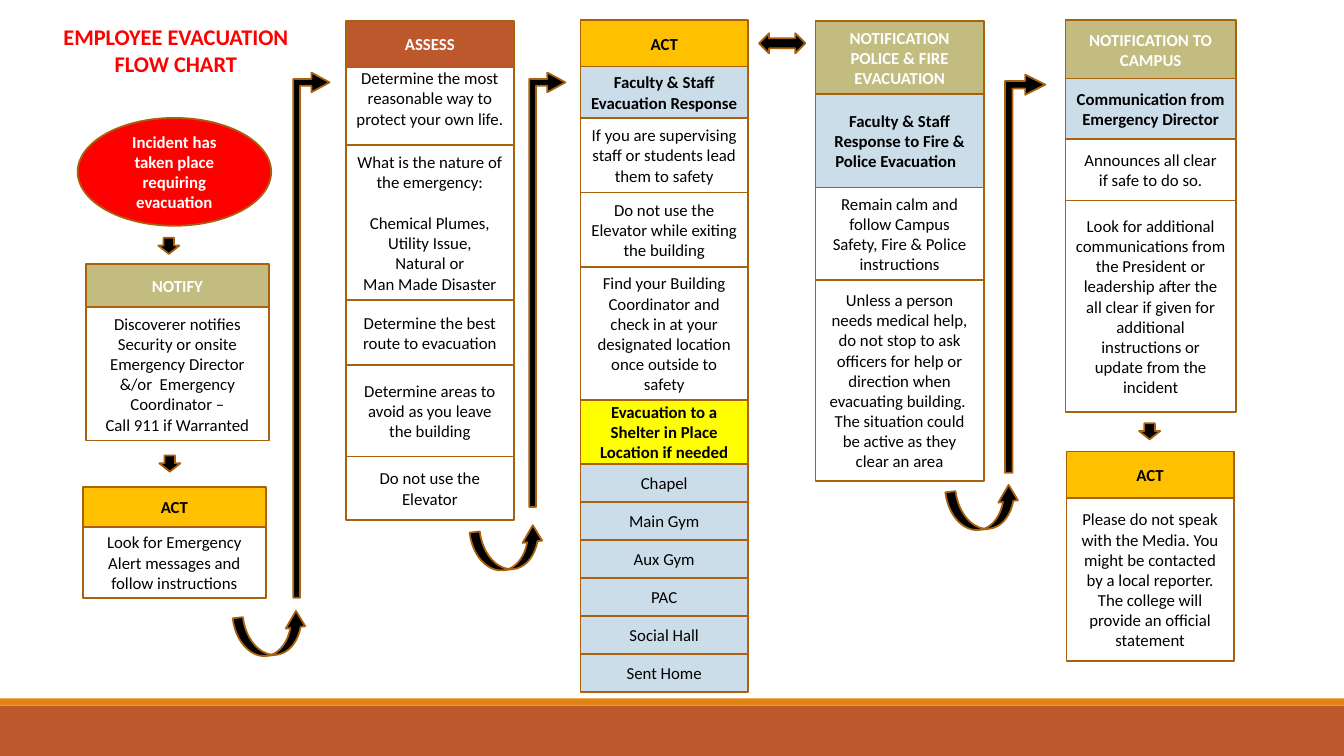
from pptx import Presentation
from pptx.dml.color import RGBColor
from pptx.enum.shapes import MSO_SHAPE
from pptx.enum.text import MSO_ANCHOR, PP_ALIGN
from pptx.util import Inches, Pt

COLS, ROWS = 133.33, 75
CELL = Inches(0.1)
RIM = "A9610D"
LOOKS = {
    "rust": ("BD582C", "FFFFFF", True),
    "olive": ("C2BC80", "FFFFFF", True),
    "gold": ("FFC000", "000000", True),
    "sky": ("CCDDEA", "000000", True),
    "room": ("CCDDEA", "000000", False),
    "sun": ("FFFF00", "000000", True),
    "plain": ("FFFFFF", "000000", False),
    "alarm": ("FF0000", "FFFFFF", True),
    "title": ("FFFFFF", "FF0000", True),
}
ROOMS = ("Chapel", "Main Gym", "Aux Gym", "PAC", "Social Hall", "Sent Home")
STACKS = [
    (8.5, 26.2, 18.2, [
        ("olive", 4.3, "NOTIFY"),
        ("plain", 13.2, "Discoverer notifies Security or onsite Emergency Director "
                        "&/or  Emergency Coordinator –\nCall 911 if Warranted"),
    ]),
    (8.2, 48.3, 18.2, [
        ("gold", 4, "ACT"),
        ("plain", 7, "Look for Emergency Alert messages and follow instructions"),
    ]),
    (34.3, 2.1, 16.7, [
        ("rust", 4.6, "ASSESS"),
        ("plain", 7.7, "Determine the most reasonable way to protect your own life."),
        ("plain", 15.4, "What is the nature of the emergency:\n\nChemical Plumes, "
                        "Utility Issue,\nNatural or\nMan Made Disaster"),
        ("plain", 6.4, "Determine the best route to evacuation"),
        ("plain", 9.1, "Determine areas to avoid as you leave the building"),
        ("plain", 6.3, "Do not use the Elevator"),
    ]),
    (57.6, 2, 16.6, [
        ("gold", 4.6, "ACT"),
        ("sky", 5.1, "Faculty & Staff\nEvacuation Response"),
        ("plain", 7.4, "If you are supervising staff or students lead them to safety"),
        ("plain", 7.4, "Do not use the Elevator while exiting the building"),
        ("plain", 13.2, "Find your Building Coordinator and check in at your "
                        "designated location once outside to safety"),
        ("sun", 6.3, "Evacuation to a Shelter in Place Location if needed"),
        *[("room", 3.78, room) for room in ROOMS],
    ]),
    (80.9, 2.1, 16.7, [
        ("olive", 7.2, "NOTIFICATION POLICE & FIRE EVACUATION"),
        ("sky", 9.3, "Faculty & Staff Response to Fire &\nPolice Evacuation  "),
        ("plain", 9.2, "Remain calm and follow Campus Safety, Fire & Police instructions"),
        ("plain", 19.9, "Unless a person needs medical help, do not stop to ask "
                        "officers for help or direction when evacuating building.  "
                        "The situation could be active as they clear an area"),
    ]),
    (105.7, 2, 16.9, [
        ("olive", 5.8, "NOTIFICATION TO CAMPUS"),
        ("sky", 6, "Communication from Emergency Director"),
        ("plain", 6.1, "Announces all clear\nif safe to do so."),
        ("plain", 21, "Look for additional communications from the President or "
                      "leadership after the all clear if given for additional "
                      "instructions or update from the incident"),
    ]),
    (105.8, 44.8, 16.6, [
        ("gold", 4.6, "ACT"),
        ("plain", 16.2, "Please do not speak with the Media. You might be contacted "
                        "by a local reporter. The college will provide an official "
                        "statement"),
    ]),
]
DOWNS = [(15.7, 23.6), (15.8, 45.2), (113, 42)]
BENDS = [(29.1, 7.2, 3.6, 52.1, 0.271), (52.5, 7.2, 3.6, 43.1, 0.271),
         (99.7, 7.4, 4, 39.5, 0.25)]
CURVES = [(23.3, 60.9), (46.8, 52.4), (94, 48.4)]


def tint(code):
    return RGBColor.from_string(code)


def fit(item, values):
    for key, value in values.items():
        setattr(item, key, value)


def draw(slide, kind, place, fill, rim=RIM, bends=()):
    shape = slide.shapes.add_shape(kind, *[round(n * CELL) for n in place])
    shape.shadow.inherit = False
    shape.fill.solid()
    shape.fill.fore_color.rgb = tint(fill)
    if rim:
        shape.line.color.rgb = tint(rim)
        shape.line.width = Pt(1.25)
    else:
        shape.line.fill.background()
    for spot, value in enumerate(bends):
        shape.adjustments[spot] = value
    return shape


def write(shape, text, ink, bold, size=12, anchor=MSO_ANCHOR.MIDDLE):
    frame = shape.text_frame
    fit(frame, {"word_wrap": True, "vertical_anchor": anchor})
    gap = False
    for spot, line in enumerate(text.split("\n")):
        if not line:
            gap = True
            continue
        para = frame.add_paragraph() if spot else frame.paragraphs[0]
        para.alignment = PP_ALIGN.CENTER
        if gap:
            para.space_before = Pt(14.65)
            gap = False
        run = para.add_run()
        run.text = line
        fit(run.font, {"name": "Calibri", "size": Pt(size), "bold": bold})
        run.font.color.rgb = tint(ink)


def card(slide, place, look, text, kind=MSO_SHAPE.RECTANGLE, rim=RIM, **form):
    fill, ink, bold = LOOKS[look]
    shape = draw(slide, kind, place, fill, rim)
    write(shape, text, ink, bold, **form)
    return shape


def stack(slide, left, top, width, cards):
    for look, height, text in cards:
        shape = card(slide, (left, top, width, height), look, text)
        if text.startswith("Determine the most"):
            fit(shape.text_frame, {"margin_top": 0, "margin_bottom": Inches(0.16)})
        top += height


def arrow(slide, kind, place, bends=()):
    return draw(slide, kind, place, "000000", bends=bends)


def curve(slide, left, top):
    shape = arrow(slide, MSO_SHAPE.CURVED_DOWN_ARROW, (left, top, 7.3, 4.1),
                  (0.25, 0.477, 0.395))
    shape.rotation = 173.3
    shape._element.spPr.xfrm.set("flipH", "1")


def main():
    deck = Presentation()
    fit(deck, {"slide_width": round(COLS * CELL), "slide_height": ROWS * CELL})
    slide = deck.slides.add_slide(deck.slide_layouts[6])
    draw(slide, MSO_SHAPE.RECTANGLE, (0, 70, COLS, 5), "BD582C", None)
    draw(slide, MSO_SHAPE.RECTANGLE, (0, 69.3, COLS, 0.7), "E48312", None)
    card(slide, (4.1, 1.8, 26.7, 6.4), "title", "EMPLOYEE EVACUATION\nFLOW CHART",
         rim=None, size=16, anchor=MSO_ANCHOR.TOP)
    card(slide, (7.7, 11.7, 19.2, 10.7), "alarm",
         "Incident has taken place requiring evacuation",
         MSO_SHAPE.FLOWCHART_CONNECTOR)
    for item in STACKS:
        stack(slide, *item)
    for left, top in DOWNS:
        arrow(slide, MSO_SHAPE.DOWN_ARROW, (left, top, 2.1, 1.6), (0.5, 0.522))
    for *place, head in BENDS:
        arrow(slide, MSO_SHAPE.BENT_ARROW, place, (0.187, head, 0.5, 0))
    for spot in CURVES:
        curve(slide, *spot)
    arrow(slide, MSO_SHAPE.LEFT_RIGHT_ARROW, (75.3, 3.3, 4.6, 2))
    deck.save("out.pptx")


if __name__ == "__main__":
    main()
